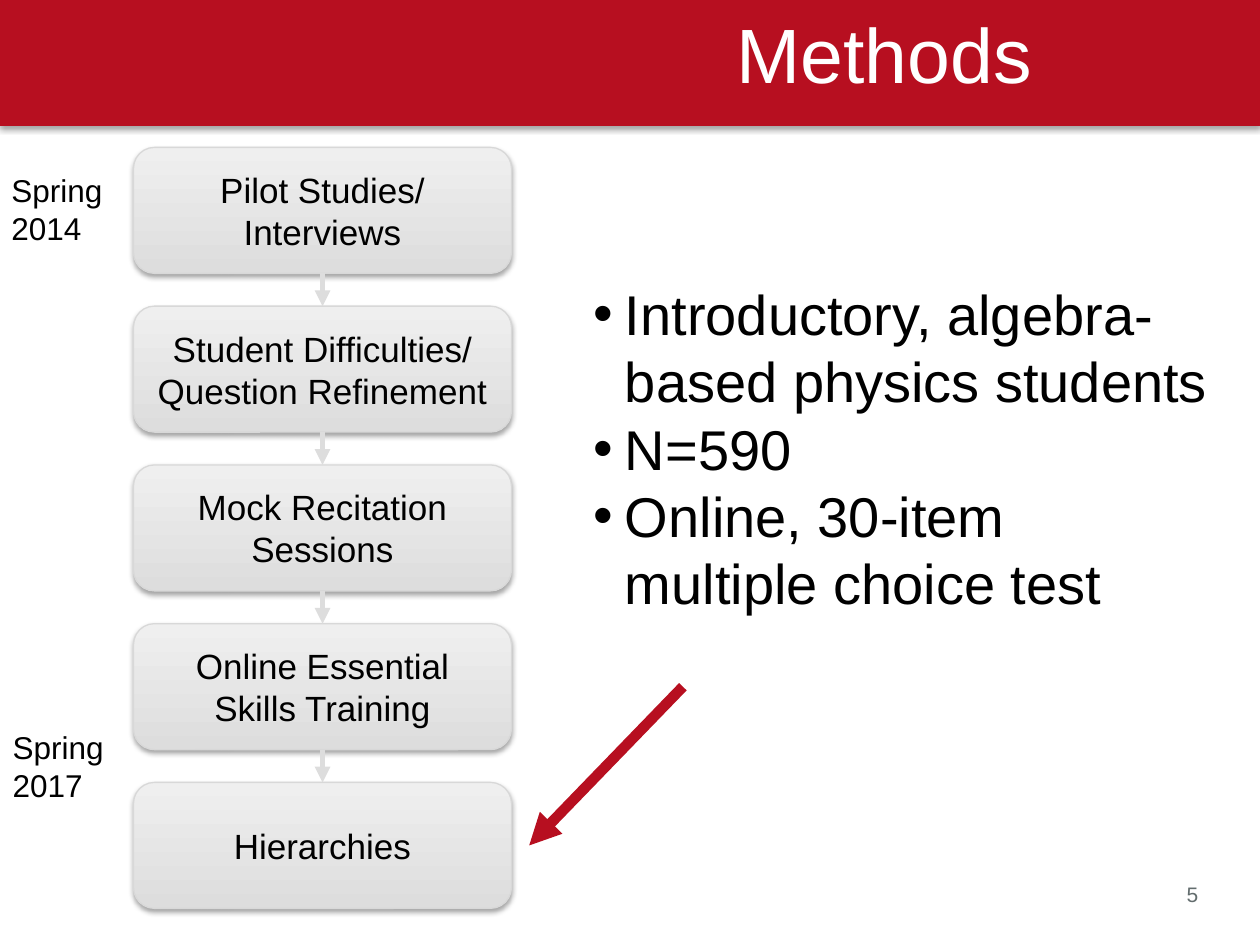
from pptx import Presentation
from pptx.dml.color import RGBColor
from pptx.enum.shapes import MSO_CONNECTOR, MSO_SHAPE
from pptx.enum.text import MSO_ANCHOR, MSO_AUTO_SIZE, PP_ALIGN
from pptx.oxml import parse_xml
from pptx.oxml.ns import nsdecls, qn
from pptx.util import Inches, Pt

RECTANGLE, ROUNDED = MSO_SHAPE.RECTANGLE, MSO_SHAPE.ROUNDED_RECTANGLE
STRAIGHT = MSO_CONNECTOR.STRAIGHT
TOP, MIDDLE = MSO_ANCHOR.TOP, MSO_ANCHOR.MIDDLE
LEFT, CENTER = PP_ALIGN.LEFT, PP_ALIGN.CENTER
GROW = MSO_AUTO_SIZE.SHAPE_TO_FIT_TEXT

RED, BLACK, WHITE, GREY = "B70F20", "000000", "FFFFFF", "636D6E"
LIGHT, SILVER, EDGE = "EFEFEF", "DDDDDD", "D8D8D8"
SOFT_SHADOW = (
    f'<a:outerShdw {nsdecls("a")} blurRad="{Pt(3.1)}" dist="{Pt(1.8)}" dir="5400000" '
    'rotWithShape="0"><a:srgbClr val="000000"><a:alpha val="35000"/></a:srgbClr></a:outerShdw>'
)


def write(shape, lines, size, color, align=LEFT, anchor=TOP, bullet=False):
    frame = shape.text_frame
    frame.word_wrap = True
    frame.vertical_anchor = anchor
    for number, line in enumerate(lines):
        paragraph = frame.add_paragraph() if number else frame.paragraphs[0]
        if bullet:
            props = paragraph._p.get_or_add_pPr()
            props.set("marL", str(Inches(0.25)))
            props.set("indent", str(-Inches(0.25)))
            props.append(parse_xml(f'<a:buChar {nsdecls("a")} char="•"/>'))
        paragraph.alignment = align
        paragraph.space_before = Pt(0)
        paragraph.line_spacing = Pt(1.2 * size)
        run = paragraph.add_run()
        run.text = line
        run.font.name, run.font.size = "Arial", Pt(size)
        run.font.color.rgb = RGBColor.from_string(color)


def arrow(start, end, color, width):
    connector = slide.shapes.add_connector(STRAIGHT, *map(Inches, start + end))
    connector.line.color.rgb = RGBColor.from_string(color)
    connector.line.width = Pt(width)
    connector.line._get_or_add_ln().append(
        parse_xml(f'<a:tailEnd {nsdecls("a")} type="triangle"/>'))
    connector._element.spPr.append(parse_xml(f'<a:effectLst {nsdecls("a")}/>'))
    return connector


prs = Presentation()
prs.slide_width, prs.slide_height = Inches(10), Inches(7.5)
slide = prs.slides.add_slide(prs.slide_layouts[1])
title, facts = slide.placeholders

# Banner, behind the title
banner = slide.shapes.add_shape(RECTANGLE, 0, 0, prs.slide_width, Inches(1))
banner.fill.solid()
banner.fill.fore_color.rgb = RGBColor.from_string(RED)
banner.line.fill.background()
slide.shapes._spTree.insert(2, banner._element)

# Title and study facts
for holder, place in ((title, (4.04, 0, 5.96, 0.84)), (facts, (4.61, 2.17, 5.1, 2.79))):
    holder.left, holder.top, holder.width, holder.height = map(Inches, place)
    holder.text_frame.auto_size = GROW
write(title, ["Methods"], 44, WHITE, CENTER)
write(facts, ["Introductory, algebra-based physics students", "N=590",
              "Online, 30-item multiple choice test"], 32, BLACK, bullet=True)

# Study stages: one column, equal pitch
stage_left, stage_top, stage_width, stage_height, pitch = 1.06, 1.17, 3, 1, 1.26
stage_names = ["Pilot Studies/ Interviews", "Student Difficulties/ Question Refinement",
               "Mock Recitation Sessions", "Online Essential Skills Training", "Hierarchies"]
stages = []
for row, name in enumerate(stage_names):
    stage = slide.shapes.add_shape(ROUNDED, Inches(stage_left), Inches(stage_top + row * pitch),
                                   Inches(stage_width), Inches(stage_height))
    stage.fill.gradient()
    stage.fill.gradient_angle = 270
    for stop, color, position in zip(stage.fill.gradient_stops, (LIGHT, SILVER), (0, 1)):
        stop.color.rgb = RGBColor.from_string(color)
        stop.position = position
    stage.line.color.rgb = RGBColor.from_string(EDGE)
    stage.line.width = Pt(0.75)
    write(stage, [name], 20, BLACK, CENTER, MIDDLE)
    stages.append(stage)

# Soft shadow under the banner and the stages
for raised in [banner] + stages:
    raised.shadow.inherit = False
    raised._element.spPr.find(qn("a:effectLst")).append(parse_xml(SOFT_SHADOW))

# Arrows: facts to the last stage, then stage to stage
arrow((5.42, 5.45), (4.2, 6.71), RED, 6)
for upper, lower in zip(stages, stages[1:]):
    step = arrow((0, 0), (0, 0), SILVER, 3)
    step.begin_connect(upper, 2)
    step.end_connect(lower, 0)

# Dates beside the first and last stages
for date, left, top in (("Spring 2014", 0.09, 1.36), ("Spring 2017", 0.1, 5.78)):
    label = slide.shapes.add_textbox(Inches(left), Inches(top), Inches(0.9), Inches(0.61))
    frame = label.text_frame
    frame.margin_left = frame.margin_right = frame.margin_top = frame.margin_bottom = 0
    frame.auto_size = GROW
    write(label, [date], 18, BLACK)

# Page number
page = slide.shapes.add_textbox(Inches(9.32), Inches(6.95), Inches(0.41), Inches(0.3))
write(page, ["5"], 12, GREY)
page.text_frame.word_wrap = False
page.text_frame.auto_size = GROW

prs.save("out.pptx")
